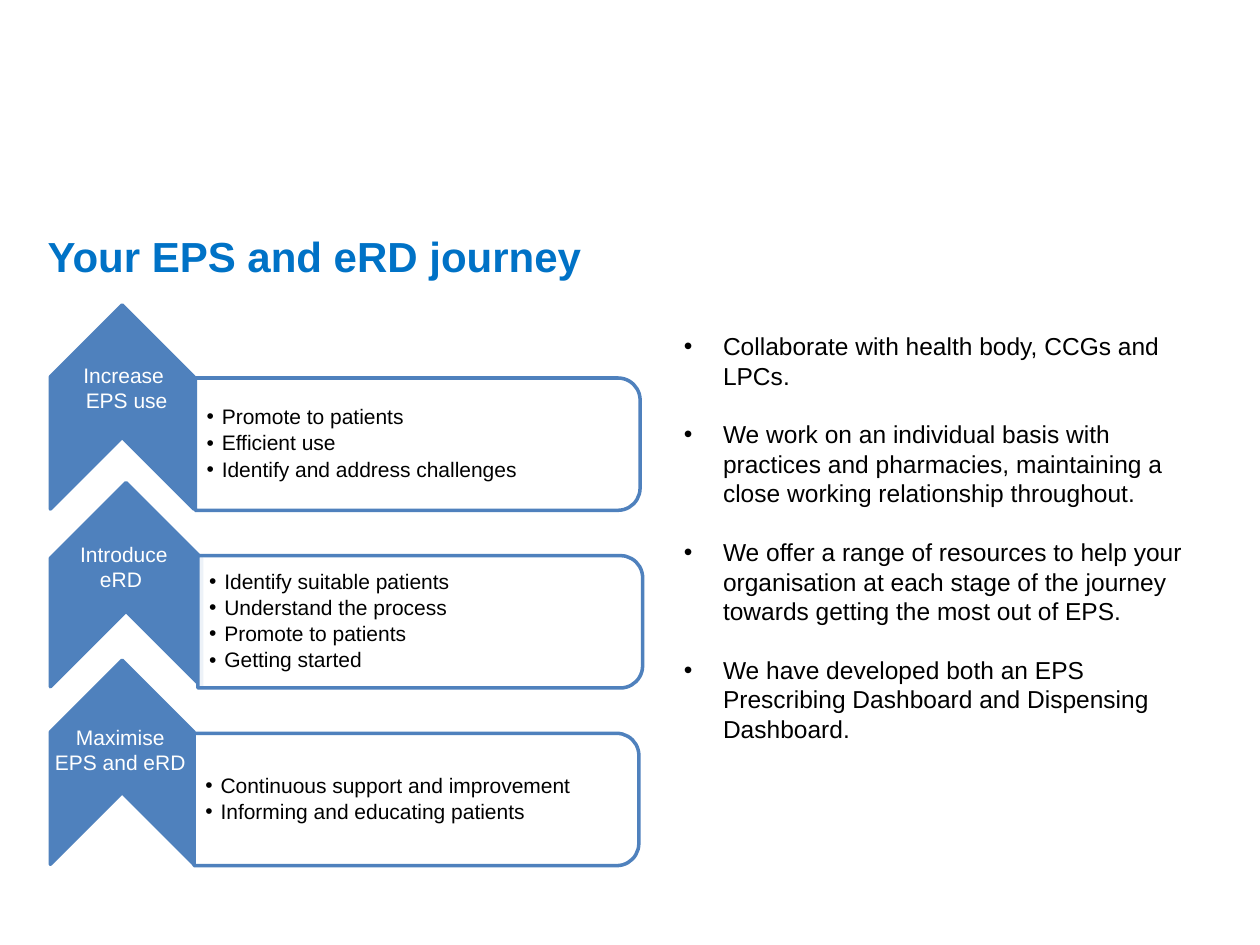
from dataclasses import dataclass
from lxml.etree import SubElement
from pptx import Presentation
from pptx.dml.color import RGBColor
from pptx.enum.shapes import MSO_SHAPE as Shape
from pptx.enum.text import MSO_ANCHOR as Anchor, PP_ALIGN as Align
from pptx.oxml.ns import qn
from pptx.util import Inches, Pt


@dataclass(frozen=True)
class Theme:
    font: str = "Arial"
    title_size: int = 24
    body_size: int = 14
    stage_size: int = 12
    title: RGBColor = RGBColor(0x00, 0x72, 0xC6)
    accent: RGBColor = RGBColor(0x4F, 0x81, 0xBD)
    black: RGBColor = RGBColor(0, 0, 0)
    white: RGBColor = RGBColor(255, 255, 255)


theme = Theme()
deck = Presentation()
deck.slide_width, deck.slide_height = Inches(10), Inches(7.5)
page = deck.slides.add_slide(deck.slide_layouts[6])


def add_text(place, lines, size, color, bold=False, indent=0, frame_format=None,
             gap=0, **para_format):
    """Add a text box with one paragraph a line; an indent makes them bullets."""
    box = page.shapes.add_textbox(*map(Inches, place))
    box.text_frame.word_wrap = True
    for name, value in (frame_format or {}).items():
        setattr(box.text_frame, name, value)
    for number, line in enumerate(lines):
        para = box.text_frame.paragraphs[0] if number == 0 else box.text_frame.add_paragraph()
        if indent:
            settings = para._p.get_or_add_pPr()
            settings.set("marL", str(Inches(indent)))
            settings.set("indent", str(-Inches(indent)))
            SubElement(settings, qn("a:buFont"), typeface=theme.font)
            SubElement(settings, qn("a:buChar"), char="•")
        for name, value in para_format.items():
            setattr(para, name, value)
        if number and gap:
            para.space_before = Pt(gap)
        span = para.add_run()
        span.text = line
        font_format = {"name": theme.font, "size": Pt(size), "bold": bold}
        for name, value in font_format.items():
            setattr(span.font, name, value)
        span.font.color.rgb = color


def add_turned(kind, place, rotation, fill):
    """Add a shape whose place is given as it stands before it is rotated."""
    shape = page.shapes.add_shape(kind, *map(Inches, place))
    shape.rotation = rotation
    shape.shadow.inherit = False
    shape.fill.solid()
    shape.fill.fore_color.rgb = fill
    shape.line.color.rgb = theme.accent
    shape.line.width = Pt(2)
    return shape


add_text((0.28, 1.78, 9.22, 0.63), ["Your EPS and eRD journey"],
         theme.title_size, theme.title, bold=True)

# Each stage: chevron left and width, panel left, label place, label, panel points
stages = [
    (0.16, 1.14, 2.79, (0.42, 2.83, 1.17, 0.5), ["Increase ", "EPS use"],
     ["Promote to patients", "Efficient use", "Identify and address challenges"]),
    (0.19, 1.2, 2.81, (0.42, 4.25, 1.08, 0.5), [" Introduce eRD"],
     ["Identify suitable patients", "Understand the process",
      "Promote to patients", "Getting started"]),
    (0.16, 1.14, 2.78, (0.33, 5.7, 1.25, 0.5), ["Maximise EPS and eRD"],
     ["Continuous support and improvement", "Informing and educating patients"]),
]
stage_pitch = 1.41
chevron_length = 1.62
panel_height, panel_length = 1.05, 3.53
panel_frame = {
    "vertical_anchor": Anchor.MIDDLE,
    "margin_left": Inches(0.09),
    "margin_right": Inches(0.01),
    "margin_top": Inches(0.01),
    "margin_bottom": Inches(0.01),
}

for row, (chevron_left, chevron_width, panel_left, _, _, points) in enumerate(stages):
    drop = row * stage_pitch
    chevron_top = 3.23 + drop - chevron_width / 2
    add_turned(Shape.CHEVRON, (chevron_left, chevron_top, chevron_length, chevron_width),
               270, theme.accent)
    panel = add_turned(Shape.ROUND_2_SAME_RECTANGLE,
                       (panel_left, 1.76 + drop, panel_height, panel_length),
                       90, theme.white)
    color = panel._element.spPr.find(qn("a:solidFill"))[0]
    SubElement(color, qn("a:alpha"), val="90000")
    add_text((panel_left - 1.24, 3.05 + drop, 3.48, 0.95), points,
             theme.stage_size, theme.black, indent=0.12, frame_format=panel_frame,
             line_spacing=0.9, space_after=Pt(2))

add_text((5.33, 2.58, 4.25, 3.7), [
    "Collaborate with health body, CCGs and LPCs.",
    "We work on an individual basis with practices and pharmacies, "
    "maintaining a close working relationship throughout.",
    "We offer a range of resources to help your organisation at each stage "
    "of the journey towards getting the most out of EPS.",
    "We have developed both an EPS Prescribing Dashboard and Dispensing Dashboard.",
], theme.body_size, theme.black, indent=0.31, gap=16.8)

for _, _, _, place, label, _ in stages:
    add_text(place, label, theme.stage_size, theme.white, alignment=Align.CENTER)

deck.save("out.pptx")
